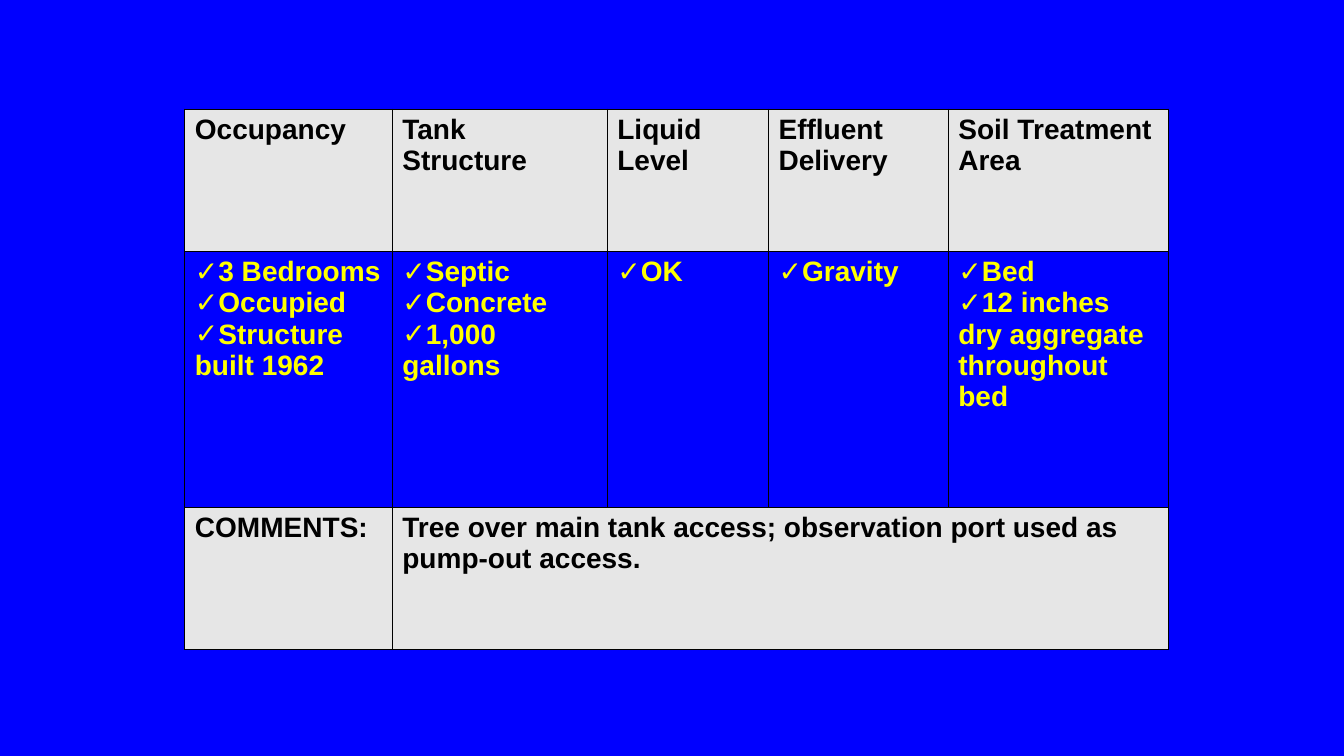
from lxml import etree
from pptx import Presentation
from pptx.dml.color import RGBColor
from pptx.oxml.ns import qn
from pptx.util import Inches, Pt

SLIDE_WIDTH, SLIDE_HEIGHT = Inches(13.33), Inches(7.5)
GRID_COLUMNS, GRID_ROWS = 160, 90
BLUE, GREY, BLACK, YELLOW = "0000FF", "E6E6E6", "000000", "FFFF00"
BORDER_SIDES = ("a:lnL", "a:lnR", "a:lnT", "a:lnB")

COLUMN_SPANS = (24.7, 25.6, 19.2, 21.4, 26.2)
ROW_SPANS = (16.9, 30.5, 16.9)
HEADINGS = ("Occupancy", "Tank Structure", "Liquid Level", "Effluent Delivery",
            "Soil Treatment Area")
FINDINGS = (
    ("3 Bedrooms", "Occupied", "Structure built 1962"),
    ("Septic", "Concrete", "1,000 gallons"),
    ("OK",),
    ("Gravity",),
    ("Bed", "12 inches dry aggregate throughout bed"),
)
COMMENT = "Tree over main tank access; observation port used as pump-out access."


def color(value):
    return RGBColor.from_string(value)


class InspectionPage:
    """Holds the text style and the current slide, and draws its elements on a grid."""

    font_name = "Arial"
    font_size = Pt(20)
    border_width = Pt(1)

    def __init__(self, deck, background):
        self.page = deck.slides.add_slide(deck.slide_layouts[6])
        self.page.background.fill.solid()
        self.page.background.fill.fore_color.rgb = color(background)
        self.column = deck.slide_width / GRID_COLUMNS
        self.row = deck.slide_height / GRID_ROWS

    def table(self, left, top, column_spans, row_spans):
        frame = self.page.shapes.add_table(
            len(row_spans), len(column_spans),
            int(left * self.column), int(top * self.row),
            int(sum(column_spans) * self.column), int(sum(row_spans) * self.row))
        table = frame.table
        table.first_row = table.horz_banding = False
        for column, span in zip(table.columns, column_spans):
            column.width = int(span * self.column)
        for row, span in zip(table.rows, row_spans):
            row.height = int(span * self.row)
        for cell in table.iter_cells():
            self.borders(cell)
            cell.fill.background()
        return table

    def borders(self, cell):
        properties = cell._tc.get_or_add_tcPr()
        for side in BORDER_SIDES:
            line = etree.SubElement(properties, qn(side), w=str(self.border_width))
            fill = etree.SubElement(line, qn("a:solidFill"))
            etree.SubElement(fill, qn("a:srgbClr"), val=BLACK)

    def label(self, cell, text):
        cell.fill.solid()
        cell.fill.fore_color.rgb = color(GREY)
        self.cell_text(cell, text, BLACK)

    def checklist(self, cell, items):
        self.cell_text(cell, "\n".join(items), YELLOW)
        for para in cell.text_frame.paragraphs:
            properties = para._p.get_or_add_pPr()
            properties.set("marL", "0")
            properties.set("indent", "0")
            etree.SubElement(properties, qn("a:buFont"), typeface=self.font_name)
            etree.SubElement(properties, qn("a:buChar"), char="✓")
            tabs = etree.SubElement(properties, qn("a:tabLst"))
            etree.SubElement(tabs, qn("a:tab"), pos=str(Inches(0.25)), algn="l")

    def cell_text(self, cell, text, text_color):
        cell.text_frame.text = text
        for para in cell.text_frame.paragraphs:
            for span in para.runs:
                span.font.name = self.font_name
                span.font.size = self.font_size
                span.font.bold = True
                span.font.color.rgb = color(text_color)


def main():
    deck = Presentation()
    deck.slide_width, deck.slide_height = SLIDE_WIDTH, SLIDE_HEIGHT
    page = InspectionPage(deck, BLUE)
    table = page.table(22, 13, COLUMN_SPANS, ROW_SPANS)
    for index, (heading, items) in enumerate(zip(HEADINGS, FINDINGS)):
        page.label(table.cell(0, index), heading)
        page.checklist(table.cell(1, index), items)
    table.cell(2, 1).merge(table.cell(2, len(HEADINGS) - 1))
    page.label(table.cell(2, 0), "COMMENTS:")
    page.label(table.cell(2, 1), COMMENT)
    deck.save("out.pptx")


if __name__ == "__main__":
    main()
